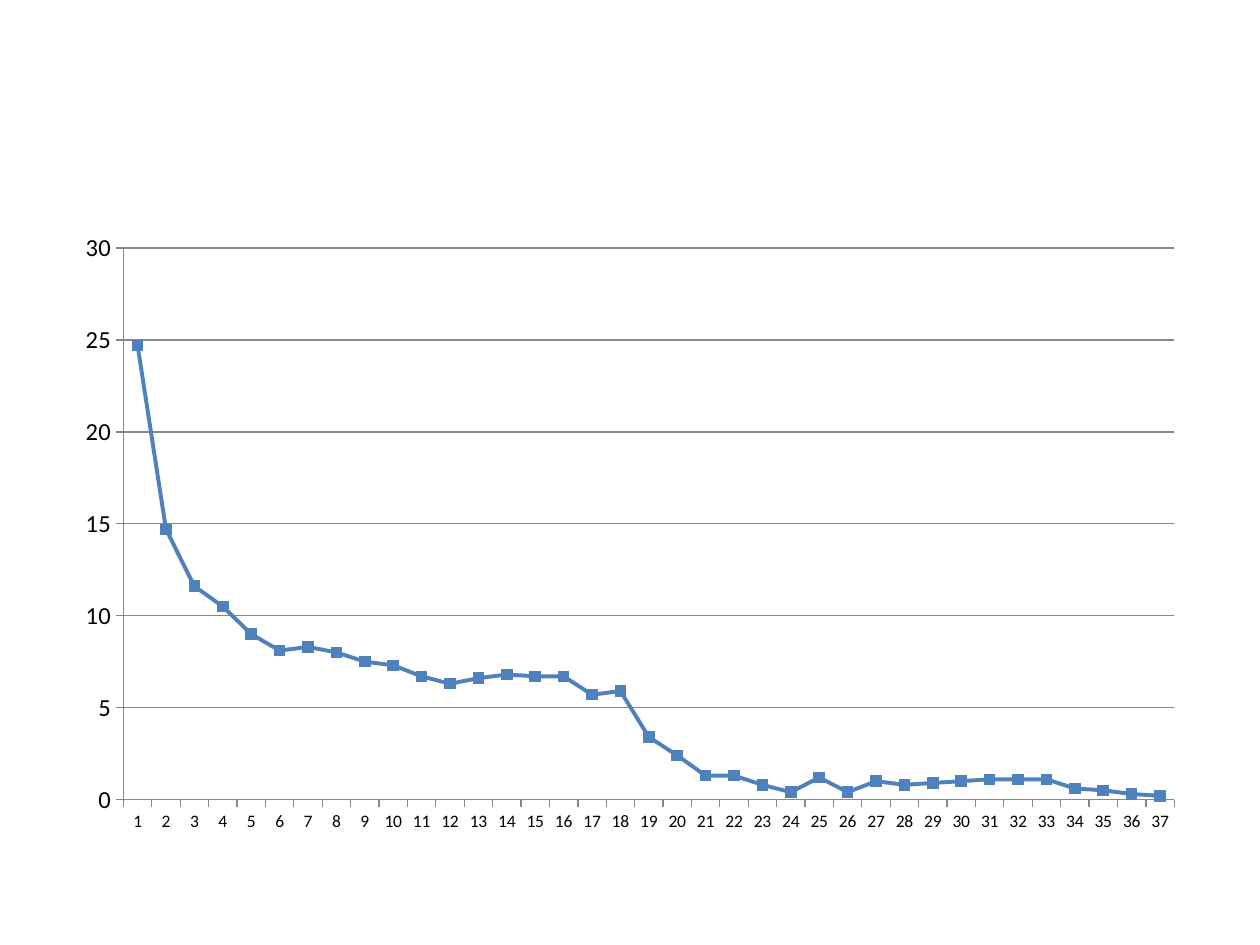
from dataclasses import dataclass

from pptx import Presentation
from pptx.chart.data import CategoryChartData
from pptx.dml.color import RGBColor
from pptx.enum.chart import XL_CHART_TYPE, XL_MARKER_STYLE, XL_TICK_MARK
from pptx.util import Inches, Pt

LINE_MARKERS = XL_CHART_TYPE.LINE_MARKERS
SQUARE = XL_MARKER_STYLE.SQUARE
TICK_OUTSIDE = XL_TICK_MARK.OUTSIDE
TICK_NONE = XL_TICK_MARK.NONE
BLANK_LAYOUT = 6


@dataclass(frozen=True)
class Theme:
    font: str = "Calibri"
    text: RGBColor = RGBColor(0x00, 0x00, 0x00)
    series: RGBColor = RGBColor(0x4F, 0x81, 0xBD)
    axis: RGBColor = RGBColor(0x87, 0x87, 0x87)
    category_size: Pt = Pt(10)
    value_size: Pt = Pt(14)
    axis_width: Pt = Pt(0.75)
    series_width: Pt = Pt(2.25)
    marker_size: int = 6


THEME = Theme()

VALUES = [
    24.7, 14.7, 11.6, 10.5, 9, 8.1, 8.3, 8, 7.5, 7.3,
    6.7, 6.3, 6.6, 6.8, 6.7, 6.7, 5.7, 5.9, 3.4, 2.4,
    1.3, 1.3, 0.8, 0.4, 1.2, 0.4, 1, 0.8, 0.9, 1,
    1.1, 1.1, 1.1, 0.6, 0.5, 0.3, 0.2,
]


def format_line(line, color, width):
    line.color.rgb = color
    line.width = width


def format_axis(axis, size):
    axis.major_tick_mark = TICK_OUTSIDE
    axis.minor_tick_mark = TICK_NONE
    axis.tick_labels.font.size = size
    format_line(axis.format.line, THEME.axis, THEME.axis_width)


def format_series(series):
    series.smooth = False
    format_line(series.format.line, THEME.series, THEME.series_width)
    marker = series.marker
    marker.style = SQUARE
    marker.size = THEME.marker_size
    marker.format.fill.solid()
    marker.format.fill.fore_color.rgb = THEME.series
    marker.format.line.color.rgb = THEME.series


def add_line_chart(slide, values, left, top, width, height):
    data = CategoryChartData()
    data.categories = [str(number) for number in range(1, len(values) + 1)]
    data.add_series("Series 1", values)
    chart = slide.shapes.add_chart(
        LINE_MARKERS, left, top, width, height, data
    ).chart
    chart.has_legend = False
    chart.has_title = False
    chart.font.name = THEME.font
    chart.font.size = THEME.category_size
    chart.font.color.rgb = THEME.text

    # Axes and gridlines
    format_axis(chart.category_axis, THEME.category_size)
    value_axis = chart.value_axis
    format_axis(value_axis, THEME.value_size)
    value_axis.minimum_scale = 0
    value_axis.maximum_scale = 30
    value_axis.major_unit = 5
    value_axis.has_major_gridlines = True
    format_line(
        value_axis.major_gridlines.format.line, THEME.axis, THEME.axis_width
    )

    # Data line
    plot = chart.plots[0]
    plot.vary_by_categories = False
    format_series(plot.series[0])


def main():
    presentation = Presentation()
    presentation.slide_width = Inches(10)
    presentation.slide_height = Inches(7.5)
    slide = presentation.slides.add_slide(
        presentation.slide_layouts[BLANK_LAYOUT]
    )
    add_line_chart(
        slide, VALUES, Inches(0.5), Inches(1.75), Inches(9), Inches(4.95)
    )
    presentation.save("out.pptx")


if __name__ == "__main__":
    main()
